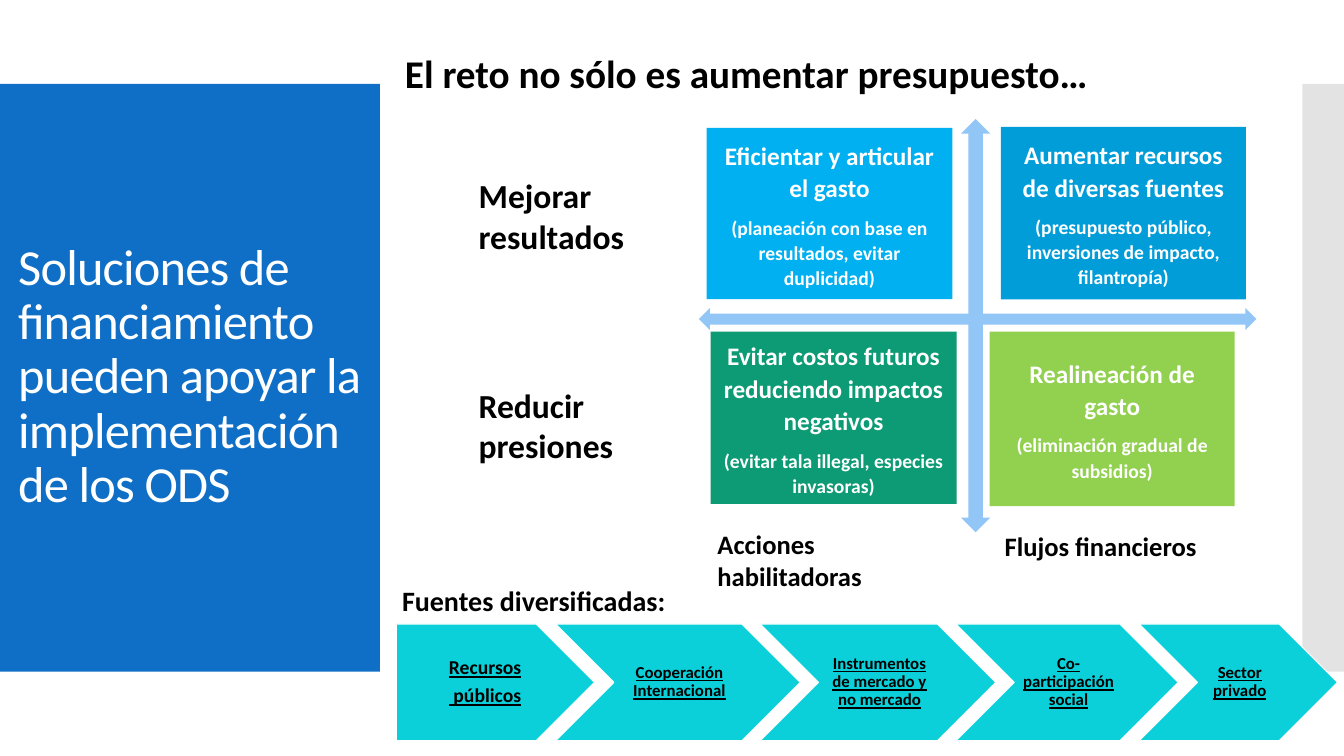
from lxml.etree import SubElement
from pptx import Presentation
from pptx.dml.color import RGBColor
from pptx.enum.shapes import MSO_SHAPE as Shape
from pptx.enum.text import MSO_ANCHOR as Anchor, MSO_AUTO_SIZE as Fit, PP_ALIGN as Align
from pptx.oxml.ns import qn
from pptx.util import Pt

FONT = "Calibri"
BLACK, WHITE = "000000", "FFFFFF"
ARROW_BLUE, TURQUOISE = "91C6F7", "0BD0D9"
CHAIN_TOP, CHAIN_HEIGHT = 445.7, 83.5

CARDS = [
    (507.6, 236.9, 175.7, 123.1, "0C9B74", "Evitar costos futuros reduciendo impactos negativos",
     "(evitar tala illegal, especies invasoras)"),
    (504.7, 91.4, 175.7, 122.4, "00B0F0", "Eficientar y articular el gasto",
     "(planeación con base en resultados, evitar duplicidad)"),
    (707, 236.9, 175, 124.6, "92D050", "Realineación de gasto",
     "(eliminación gradual de subsidios)"),
    (715, 90.7, 175, 123.1, "009DD9", "Aumentar recursos de diversas fuentes",
     "(presupuesto público, inversiones de impacto, filantropía)"),
]
LABELS = [
    (505.4, 373.7, 180.7, 53.3, 19, ["Acciones habilitadoras"]),
    (334.8, 271.4, 119.5, 65.5, 24, ["Reducir", "presiones"]),
    (334.8, 121.7, 164.9, 65.5, 24, ["Mejorar resultados"]),
    (710.6, 375.1, 188.6, 30.2, 19, ["Flujos financieros"]),
    (280.1, 413.3, 285.8, 31.7, 20, ["Fuentes diversificadas:"]),
    (282.2, 31.7, 617, 41, 28, ["El reto no sólo es aumentar presupuesto…"]),
]
SOURCES = [
    (283, 141.8, Shape.PENTAGON, 14, ["Recursos", " públicos"]),
    (396.7, 175, Shape.CHEVRON, 12, ["Cooperación Internacional"]),
    (542.9, 168.5, Shape.CHEVRON, 12, ["Instrumentos de mercado y no mercado"]),
    (682.6, 159.1, Shape.CHEVRON, 12, ["Co-participación social"]),
    (813.6, 141.8, Shape.CHEVRON, 12, ["Sector privado"]),
]


def color(value):
    """Turn a hex string into a colour."""
    return RGBColor.from_string(value)


def apply(target, values):
    """Set the attributes of an object from a dict."""
    for name, value in values.items():
        setattr(target, name, value)


def write(frame, rows, frame_format, para_format):
    """Fill a text frame with rows of text, size and colour; return the spans."""
    apply(frame, {"word_wrap": True, **frame_format})
    spans = []
    for index, (text, size, tint, font_format) in enumerate(rows):
        para = frame.add_paragraph() if index else frame.paragraphs[0]
        apply(para, para_format)
        span = para.add_run()
        span.text = text
        apply(span.font, {"name": FONT, "size": Pt(size), **font_format})
        span.font.color.rgb = color(tint)
        spans.append(span)
    return spans


def add_block(page, kind, left, top, width, height, fill, line=None):
    """Add a filled preset shape with an optional outline."""
    block = page.shapes.add_shape(kind, Pt(left), Pt(top), Pt(width), Pt(height))
    block.shadow.inherit = False
    block.fill.solid()
    block.fill.fore_color.rgb = color(fill)
    if line:
        block.line.color.rgb = color(line)
        block.line.width = Pt(0.85)
    else:
        block.line.fill.background()
    return block


def make_translucent(block, percent):
    """Set the opacity of a solid fill."""
    tint = block.fill._xPr.find(qn("a:solidFill"))[0]
    SubElement(tint, qn("a:alpha")).set("val", str(percent * 1000))


def add_title(page, text):
    """Place the title in front of the side panel."""
    title = page.shapes.title
    apply(title, {"left": Pt(5.8), "top": Pt(88.6), "width": Pt(263.5), "height": Pt(362.2)})
    page.shapes._spTree.append(title._element)
    spans = write(title.text_frame, [(text, 36, WHITE, {})],
                  {"vertical_anchor": Anchor.MIDDLE, "auto_size": Fit.NONE},
                  {"alignment": Align.LEFT, "line_spacing": 0.9})
    spans[0].font._element.set("spc", "-60")


def add_card(page, left, top, width, height, fill, heading, detail):
    """Add a quadrant card with a heading and a detail."""
    card = add_block(page, Shape.RECTANGLE, left, top, width, height, fill)
    rows = [(heading, 18, WHITE, {"bold": True}), (detail, 14, WHITE, {"bold": True})]
    write(card.text_frame, rows, {"vertical_anchor": Anchor.MIDDLE},
          {"alignment": Align.CENTER, "line_spacing": 1.07, "space_after": Pt(8)})


def add_label(page, left, top, width, height, size, lines):
    """Add a bold black label."""
    box = page.shapes.add_textbox(Pt(left), Pt(top), Pt(width), Pt(height))
    rows = [(line, size, BLACK, {"bold": True}) for line in lines]
    write(box.text_frame, rows, {"auto_size": Fit.SHAPE_TO_FIT_TEXT}, {})


def add_source(page, left, width, kind, size, lines):
    """Add one link of the chain of funding sources."""
    link = add_block(page, kind, left, CHAIN_TOP, width, CHAIN_HEIGHT, TURQUOISE, WHITE)
    rows = [(line, size, BLACK, {"bold": True, "underline": True}) for line in lines]
    margins = {"margin_left": Pt(size * 2 - 20.4), "margin_right": Pt(1.4),
               "margin_top": Pt(2.9), "margin_bottom": Pt(2.9)}
    write(link.text_frame, rows, {"vertical_anchor": Anchor.MIDDLE, **margins},
          {"alignment": Align.CENTER, "line_spacing": 0.9, "space_after": Pt(round(size * 0.35, 1))})


def main():
    """Build the slide and save the deck."""
    deck = Presentation()
    apply(deck, {"slide_width": Pt(960), "slide_height": Pt(540)})
    page = deck.slides.add_slide(deck.slide_layouts[5])
    add_block(page, Shape.RECTANGLE, 0, 60, 271.4, 419.8, "0F6FC6")
    edge = add_block(page, Shape.RECTANGLE, 930.2, 60, 29.8, 419.8, "C8C8C8")
    make_translucent(edge, 50)
    add_title(page, "Soluciones de financiamiento pueden apoyar la implementación de los ODS")
    for card in CARDS:
        add_card(page, *card)
    add_block(page, Shape.UP_DOWN_ARROW, 686.5, 85, 20.9, 295.2, ARROW_BLUE)
    add_block(page, Shape.LEFT_RIGHT_ARROW, 499.3, 220, 398.2, 15.8, ARROW_BLUE)
    for source in SOURCES:
        add_source(page, *source)
    for label in LABELS:
        add_label(page, *label)
    deck.save("out.pptx")


if __name__ == "__main__":
    main()
